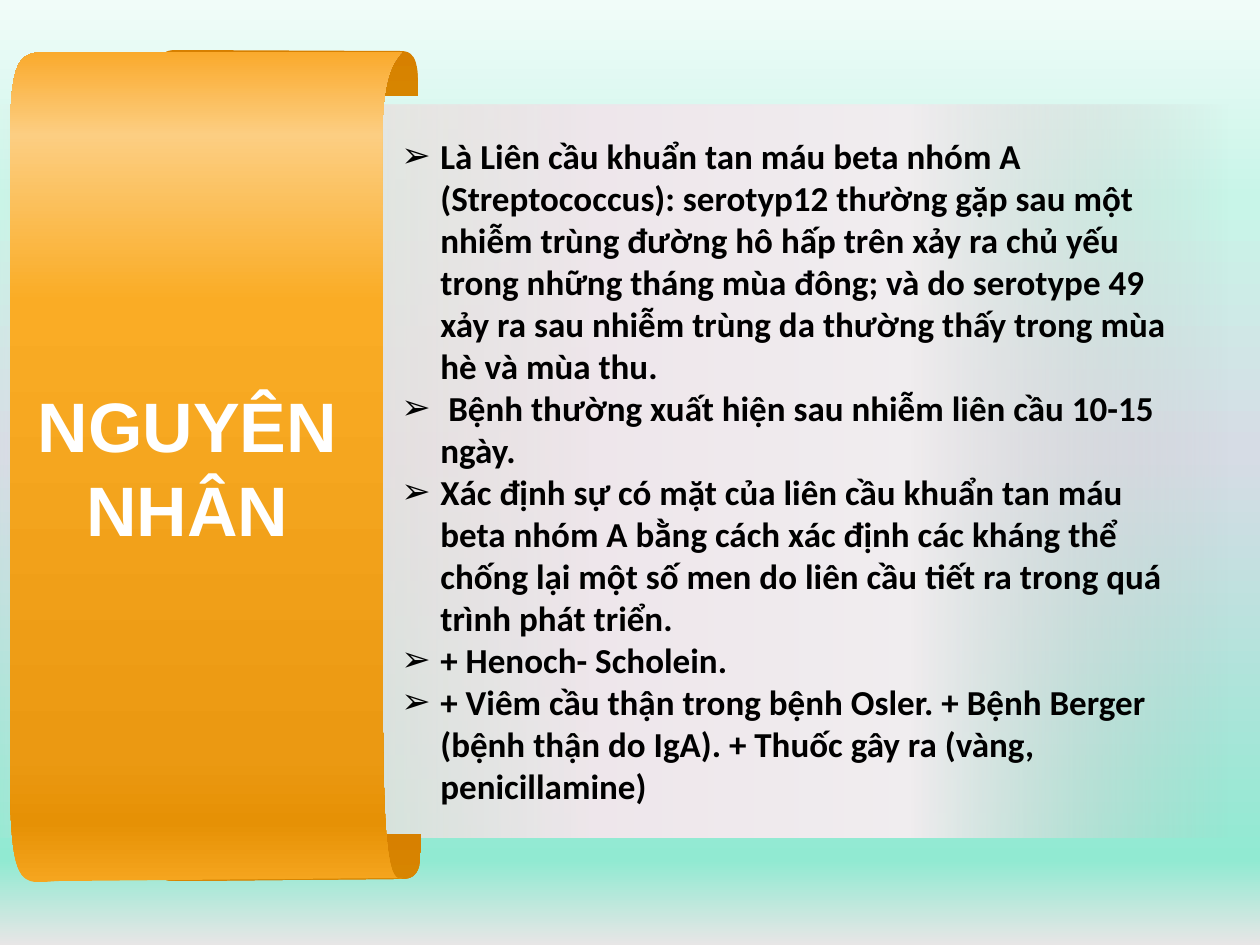
"""Build the slide on causes: an orange scroll title beside a bulleted list."""
from lxml.etree import SubElement
from pptx import Presentation
from pptx.dml.color import RGBColor as RGB
from pptx.enum.shapes import MSO_SHAPE as Shape
from pptx.enum.text import MSO_AUTO_SIZE as AutoSize, PP_ALIGN as Align
from pptx.oxml.ns import qn
from pptx.util import Pt

PX = 914400 // 126


class Theme:
    title = {"size": 40, "font": "Arial", "color": "FFFFFF"}
    body = {"size": 20, "font": "Calibri", "color": "000000"}
    bullet_font = "Arial"
    backdrop = [(0, "F1FCF9"), (21, "C8F5E8"), (48, "D6DCE5"), (91, "91EAD2"), (100, "E7E6E6")]
    panel = [(0, "C8C7C6", 0), (25, "F0EDEF"), (50, "EEE6EB"), (85, "E2DCD1", 52), (98, "EFEBE5", 0)]
    curl = [(0, "D78000"), (100, "D78500")]
    ribbon = [(0, "F5A51E"), (7, "E69105"), (15, "EB9912"), (70, "FAAC25"), (90, "FCCE82"), (100, "FAAA2D")]


def paint(fill, element, stops, angle):
    fill.gradient()
    fill.gradient_angle = angle
    stop_list = element.find(".//" + qn("a:gsLst"))
    for old_stop in list(stop_list):
        stop_list.remove(old_stop)
    for position, color, *alpha in stops:
        stop = SubElement(stop_list, qn("a:gs"), pos=str(position * 1000))
        tint = SubElement(stop, qn("a:srgbClr"), val=color)
        if alpha:
            SubElement(tint, qn("a:alpha"), val=str(alpha[0] * 1000))


def add_text(page, place, texts, *, size, font, color, align=Align.LEFT, bullet=None, indent=0):
    box = page.shapes.add_textbox(*[value * PX for value in place])
    frame = box.text_frame
    frame.word_wrap = True
    frame.auto_size = AutoSize.SHAPE_TO_FIT_TEXT
    for index, text in enumerate(texts):
        para = frame.paragraphs[0] if index == 0 else frame.add_paragraph()
        para.alignment = align
        span = para.add_run()
        span.text = text
        span.font.size = Pt(size)
        span.font.name = font
        span.font.bold = True
        span.font.color.rgb = RGB.from_string(color)
        if bullet:
            props = para._p.get_or_add_pPr()
            props.set("marL", str(indent * PX))
            props.set("indent", str(-indent * PX))
            SubElement(props, qn("a:buFont"), typeface=Theme.bullet_font)
            SubElement(props, qn("a:buChar"), char=bullet)


deck = Presentation()
deck.slide_width = 1260 * PX
deck.slide_height = 945 * PX
page = deck.slides.add_slide(deck.slide_layouts[6])
paint(page.background.fill, page.element, Theme.backdrop, 270)

panel = page.shapes.add_shape(Shape.RECTANGLE, *[value * PX for value in (-42, 105, 1270, 733)])
panel.shadow.inherit = False
panel.line.fill.background()
paint(panel.fill, panel.element, Theme.panel, 180)

top_curl = [(418, 96), (396, 96), (155, 97), (156, 59, 158, 49, 179, 50), (399, 51),
            (418, 50, 418, 66, 418, 96)]
bottom_curl = [(421, 834), (398, 834), (151, 834), (152, 872, 154, 881, 176, 881), (402, 879),
               (421, 879, 421, 864, 421, 834)]
ribbon = [(402, 52), (81, 52), (24, 56, 10, 31, 10, 147), (10, 349, 10, 551, 10, 752),
          (9, 910, 23, 879, 69, 881), (403, 878), (389, 883, 384, 853, 383, 723),
          (383, 562, 383, 401, 383, 238), (383, 129, 377, 78, 402, 52)]

for outline, stops, angle in [(top_curl, Theme.curl, 270), (bottom_curl, Theme.curl, 270),
                              (ribbon, Theme.ribbon, 90)]:
    corners = [segment[-2:] for segment in outline]
    left, top = map(min, zip(*corners))
    builder = page.shapes.build_freeform(*corners[0], scale=PX)
    builder.add_line_segments(corners[1:], close=True)
    piece = builder.convert_to_shape()
    for segment, line in zip(outline[1:], piece.element.findall(".//" + qn("a:lnTo"))):
        if len(segment) == 6:
            line.tag = qn("a:cubicBezTo")
            line.remove(line[0])
            for x, y in zip(segment[::2], segment[1::2]):
                SubElement(line, qn("a:pt"), x=str(x - left), y=str(y - top))
    piece.shadow.inherit = False
    piece.line.fill.background()
    paint(piece.fill, piece.element, stops, angle)

causes = [
    "Là Liên cầu khuẩn tan máu beta nhóm A (Streptococcus): serotyp12 thường gặp sau một nhiễm trùng "
    "đường hô hấp trên xảy ra chủ yếu trong những tháng mùa đông; và do serotype 49 xảy ra sau nhiễm "
    "trùng da thường thấy trong mùa hè và mùa thu.",
    " Bệnh thường xuất hiện sau nhiễm liên cầu 10-15 ngày.",
    "Xác định sự có mặt của liên cầu khuẩn tan máu beta nhóm A bằng cách xác định các kháng thể chống "
    "lại một số men do liên cầu tiết ra trong quá trình phát triển.",
    "+ Henoch- Scholein.",
    "+ Viêm cầu thận trong bệnh Osler. + Bệnh Berger (bệnh thận do IgA). + Thuốc gây ra (vàng, "
    "penicillamine)",
]
add_text(page, (21, 376, 333, 183), ["NGUYÊN NHÂN"], align=Align.CENTER, **Theme.title)
add_text(page, (389, 128, 804, 759), causes, bullet="➢", indent=39, **Theme.body)

deck.save("out.pptx")
